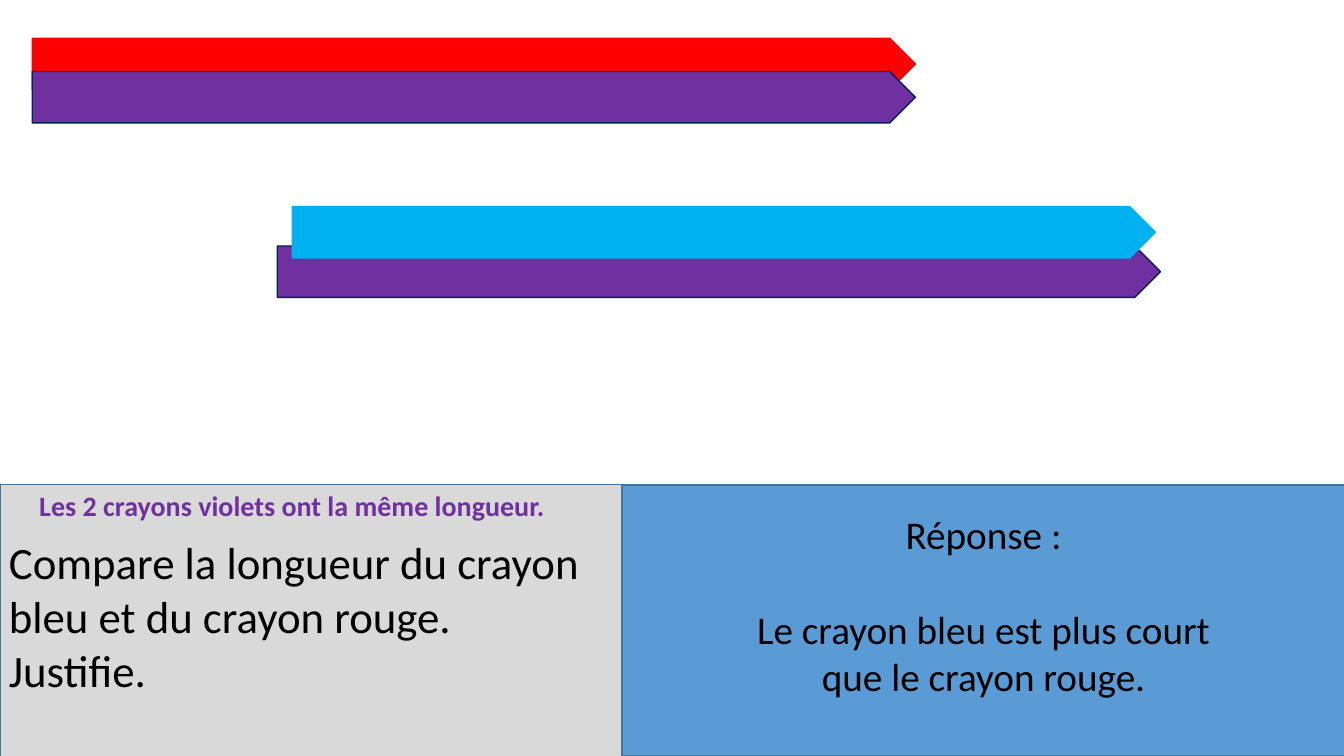
from pptx import Presentation
from pptx.dml.color import RGBColor
from pptx.enum.shapes import MSO_SHAPE as SHAPE
from pptx.enum.text import MSO_ANCHOR as ANCHOR, PP_ALIGN as ALIGN
from pptx.util import Inches, Pt

VIOLET = "7030A0"
PANEL_LINE = "43739E"


def color(value):
    """Turn a hex string into a colour."""
    return RGBColor.from_string(value)


def write(tf, lines, size, fill="000000", bold=False, align=ALIGN.LEFT, first_gap=0):
    """Write one paragraph per line, with a gap after the first."""
    tf.word_wrap = True
    for i, line in enumerate(lines):
        p = tf.paragraphs[0] if i == 0 else tf.add_paragraph()
        p.alignment = align
        p.space_after = Pt(first_gap if i == 0 else 0)
        r = p.add_run()
        r.text = line
        r.font.name = "Calibri"
        r.font.size = Pt(size)
        r.font.bold = bold
        r.font.color.rgb = color(fill)


def add_block(s, kind, x, y, w, h, fill, line):
    """Add a filled and outlined shape."""
    sp = s.shapes.add_shape(kind, Inches(x), Inches(y), Inches(w), Inches(h))
    sp.shadow.inherit = False
    sp.fill.solid()
    sp.fill.fore_color.rgb = color(fill)
    sp.line.color.rgb = color(line)
    sp.line.width = Pt(1)
    return sp


def add_label(s, x, y, w, h, lines, size, **fmt):
    """Add a wrapping text box."""
    sp = s.shapes.add_textbox(Inches(x), Inches(y), Inches(w), Inches(h))
    write(sp.text_frame, lines, size, **fmt)


def add_pencil(s, x, y, length, fill, line):
    """Add a pencil pointing to the right."""
    add_block(s, SHAPE.PENTAGON, x, y, length, 0.51, fill, line)


def add_answer(s):
    """Add the answer panel."""
    sp = add_block(s, SHAPE.RECTANGLE, 6.17, 4.81, 7.17, 2.69, "5B9BD5", PANEL_LINE)
    tf = sp.text_frame
    tf.vertical_anchor = ANCHOR.MIDDLE
    tf.margin_bottom = Inches(0.36)
    lines = ["Réponse :", "Le crayon bleu est plus court", "que le crayon rouge."]
    write(tf, lines, 28, align=ALIGN.CENTER, first_gap=34)


def main():
    """Build the slide and save it."""
    prs = Presentation()
    prs.slide_width, prs.slide_height = Inches(13.33), Inches(7.5)
    s = prs.slides.add_slide(prs.slide_layouts[6])

    add_block(s, SHAPE.RECTANGLE, 0, 4.81, 13.33, 2.7, "D9D9D9", PANEL_LINE)
    question = ["Compare la longueur du crayon bleu et du crayon rouge.", "Justifie."]
    add_label(s, -0.01, 5.26, 6.17, 1.72, question, 32)
    add_answer(s)
    add_label(s, 0, 4.8, 5.79, 0.44, ["Les 2 crayons violets ont la même longueur."], 20,
              fill=VIOLET, bold=True, align=ALIGN.CENTER)

    for x, y, length, fill, line in [
        (0.32, 0.38, 8.76, "FF0000", "FF0000"),
        (0.32, 0.71, 8.76, VIOLET, "002060"),
        (2.75, 2.44, 8.76, VIOLET, "002060"),
        (2.9, 2.05, 8.56, "00B0F0", "00B0F0"),
    ]:
        add_pencil(s, x, y, length, fill, line)

    prs.save("out.pptx")


if __name__ == "__main__":
    main()
